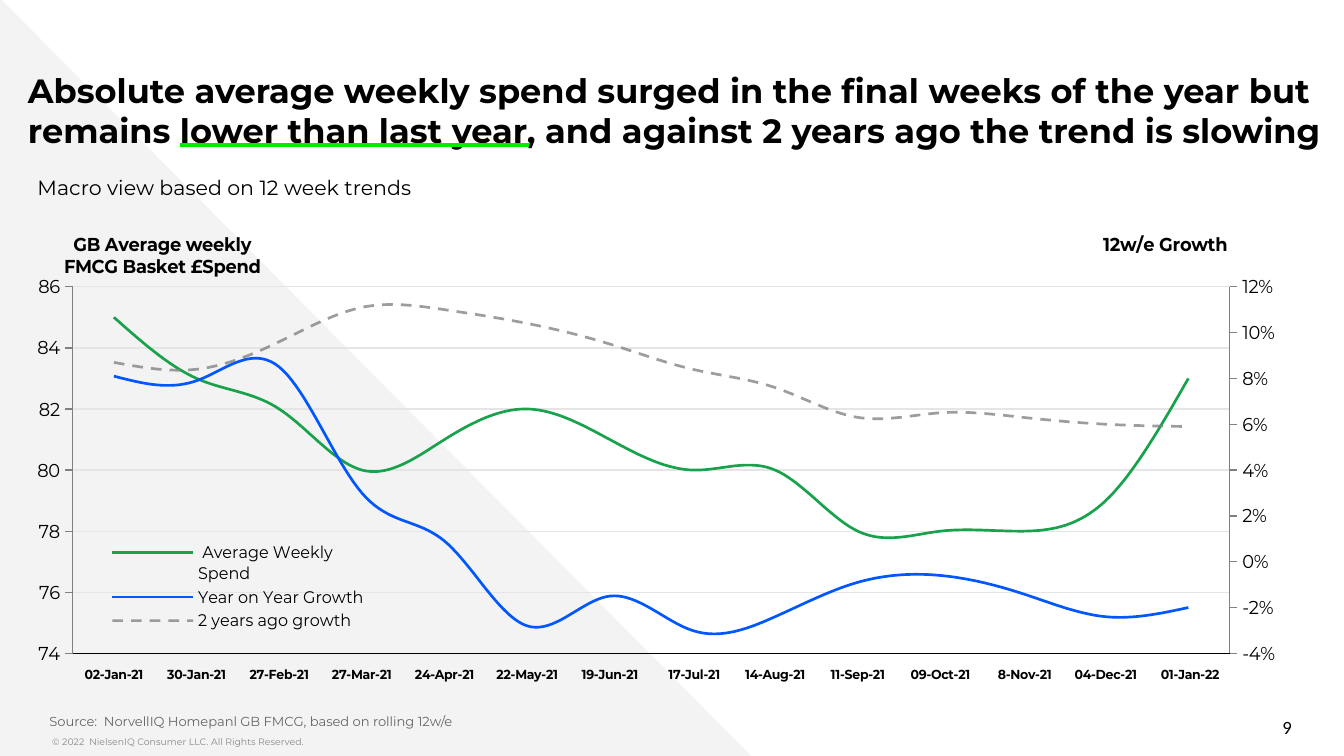
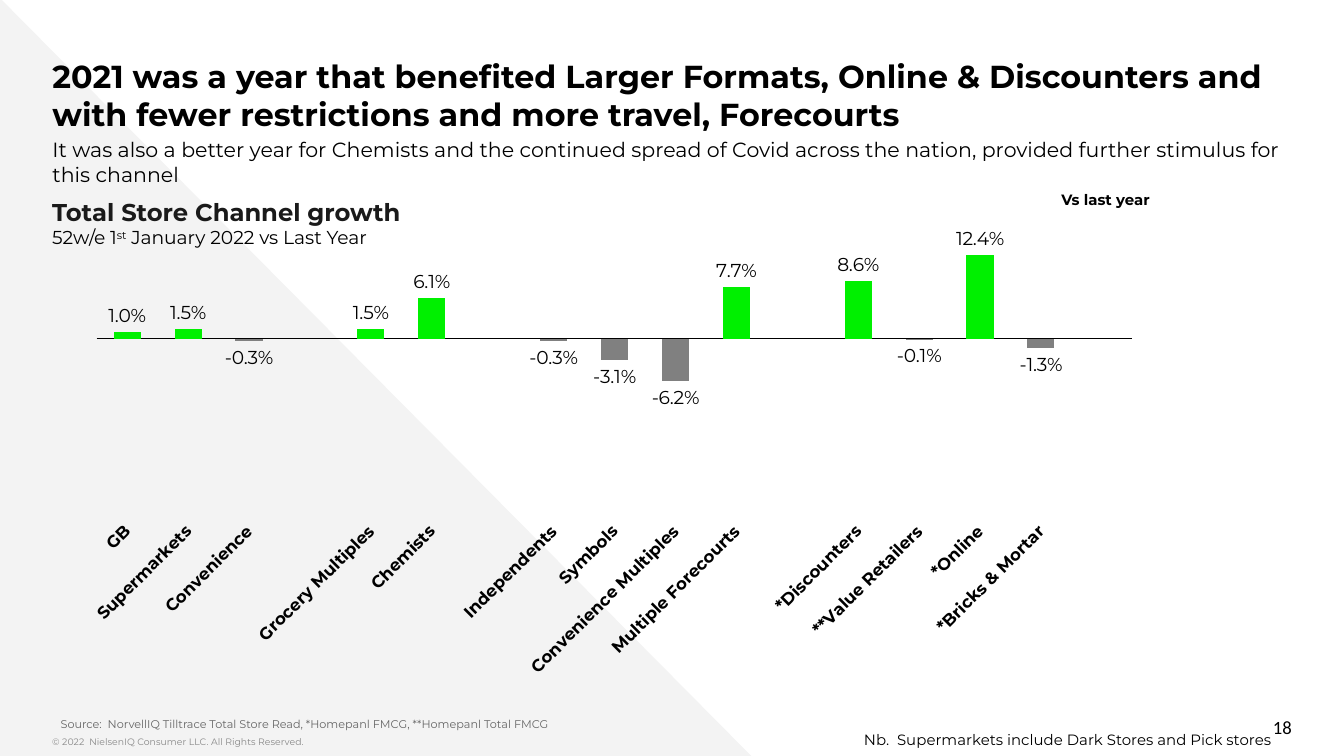
from copy import deepcopy
from typing import NamedTuple

from lxml.etree import SubElement
from pptx import Presentation
from pptx.chart.axis import ValueAxis
from pptx.chart.data import CategoryChartData
from pptx.dml.color import RGBColor
from pptx.enum.chart import (XL_CHART_TYPE, XL_LABEL_POSITION, XL_LEGEND_POSITION,
                             XL_TICK_LABEL_POSITION, XL_TICK_MARK)
from pptx.enum.dml import MSO_LINE
from pptx.enum.shapes import MSO_CONNECTOR, MSO_SHAPE
from pptx.enum.text import MSO_ANCHOR, MSO_AUTO_SIZE, PP_ALIGN
from pptx.oxml import parse_xml
from pptx.oxml.ns import nsdecls, qn
from pptx.util import Pt

FONT = "Montserrat"
BLACK = RGBColor(0x00, 0x00, 0x00)
INK = RGBColor(0x1A, 0x1A, 0x1A)
SOURCE_GREY = RGBColor(0x66, 0x66, 0x66)
GREY = RGBColor(0x80, 0x80, 0x80)
COPYRIGHT_GREY = RGBColor(0x88, 0x88, 0x88)
GRID_GREY = RGBColor(0xE5, 0xE5, 0xE5)
TRIANGLE_GREY = RGBColor(0xF3, 0xF3, 0xF3)
UNDERLINE_GREEN = RGBColor(0x00, 0xEB, 0x00)
BAR_GREEN = RGBColor(0x00, 0xF0, 0x00)
SPEND_GREEN = RGBColor(0x17, 0xA2, 0x4B)
GROWTH_BLUE = RGBColor(0x00, 0x56, 0xFF)


class Box(NamedTuple):
    left: float
    top: float
    width: float
    height: float

    def points(self):
        return [Pt(length) for length in self]


class Page(NamedTuple):
    number: str
    title: str
    title_box: Box
    title_size: float
    source: str
    source_box: Box
    source_size: float


class LineSeries(NamedTuple):
    name: str
    color: RGBColor
    values: list
    number_format: str = "0.0%"
    dashed: bool = False


class Channel(NamedTuple):
    name: str = " "
    growth: float | None = None


TREND_PAGE = Page(
    "9",
    "Absolute average weekly spend surged in the final weeks of the year but remains "
    "lower than last year, and against 2 years ago the trend is slowing",
    Box(15, 30, 705, 52), 18,
    "Source:  NorvellIQ Homepanl GB FMCG, based on rolling 12w/e",
    Box(15, 375, 642, 14.5), 7)
CHANNEL_PAGE = Page(
    "18",
    "2021 was a year that benefited Larger Formats, Online & Discounters and with fewer "
    "restrictions and more travel, Forecourts",
    Box(28, 23, 687, 32), 17,
    "Source:  NorvellIQ Tilltrace Total Store Read, *Homepanl FMCG, **Homepanl Total FMCG",
    Box(21, 377, 642, 14.5), 6)

WEEKS = ["02-Jan-21", "30-Jan-21", "27-Feb-21", "27-Mar-21", "24-Apr-21", "22-May-21",
         "19-Jun-21", " 17-Jul-21", "14-Aug-21", "11-Sep-21", "09-Oct-21", " 8-Nov-21",
         "04-Dec-21", " 01-Jan-22"]
TRENDS = [
    LineSeries(" Average Weekly Spend ", SPEND_GREEN,
               [85, 83, 82, 80, 81, 82, 81, 80, 80, 78, 78, 78, 79, 83], "0"),
    LineSeries("Year on Year Growth", GROWTH_BLUE,
               [0.081, 0.079, 0.085, 0.03, 0.009, -0.028, -0.015, -0.03, -0.024, -0.009,
                -0.006, -0.014, -0.024, -0.02]),
    LineSeries("2 years ago growth", GREY,
               [0.087, 0.084, 0.096, 0.111, 0.11, 0.104, 0.095, 0.084, 0.076, 0.063,
                0.065, 0.063, 0.06, 0.059], dashed=True),
]
CHANNELS = [
    Channel("GB", 0.01), Channel("Supermarkets", 0.015), Channel("Convenience", -0.003),
    Channel(),
    Channel("Grocery Multiples", 0.015), Channel("Chemists", 0.061),
    Channel(),
    Channel("Independents", -0.003), Channel("Symbols", -0.031),
    Channel("Convenience Multiples", -0.062), Channel("Multiple Forecourts", 0.077),
    Channel(),
    Channel("*Discounters", 0.086), Channel("**Value Retailers", -0.001),
    Channel("*Online", 0.124), Channel("*Bricks & Mortar", -0.013),
    Channel(),
]


def set_font(font, size: float, color: RGBColor = BLACK, bold: bool = False,
             name: str = FONT) -> None:
    font.name, font.size, font.bold = name, Pt(size), bold
    font.color.rgb = color


def write(paragraph, text: str, *, size: float, color: RGBColor = BLACK,
          bold: bool = False, name: str = FONT, align=PP_ALIGN.LEFT,
          superscript: bool = False) -> None:
    paragraph.alignment = align
    run = paragraph.add_run()
    run.text = text
    set_font(run.font, size, color, bold, name)
    if superscript:
        run.font._element.set("baseline", "30000")


def set_frame(frame, side: float, edge: float, anchor=MSO_ANCHOR.TOP, wrap: bool = True):
    frame.margin_left = frame.margin_right = Pt(side)
    frame.margin_top = frame.margin_bottom = Pt(edge)
    frame.vertical_anchor = anchor
    frame.auto_size = MSO_AUTO_SIZE.NONE
    frame.word_wrap = wrap
    return frame.paragraphs[0]


def add_text_box(slide, box: Box, side: float = 7.2, anchor=MSO_ANCHOR.TOP,
                 wrap: bool = True):
    shape = slide.shapes.add_textbox(*box.points())
    return set_frame(shape.text_frame, side, 3.6, anchor, wrap)


def place_placeholder(shape, box: Box):
    shape.left, shape.top, shape.width, shape.height = box.points()
    paragraph = set_frame(shape.text_frame, 0, 7.2)
    paragraph.line_spacing = 1.0
    paragraph.space_before = Pt(0)
    return paragraph


def add_page(presentation, page: Page):
    slide = presentation.slides.add_slide(presentation.slide_layouts[0])
    triangle = slide.shapes.add_shape(MSO_SHAPE.RIGHT_TRIANGLE,
                                      *Box(0, -1, 402.5, 406).points())
    triangle.shadow.inherit = False
    triangle.fill.solid()
    triangle.fill.fore_color.rgb = TRIANGLE_GREY
    triangle.line.fill.background()
    slide.shapes._spTree.insert(2, triangle._element)

    write(add_text_box(slide, Box(28, 391, 399, 14), side=0),
          "© 2022  NielsenIQ Consumer LLC. All Rights Reserved.",
          size=5, color=COPYRIGHT_GREY)
    write(add_text_box(slide, Box(530, 379, 162, 21.5), side=0, anchor=MSO_ANCHOR.MIDDLE),
          page.number, size=10, name="Calibri", align=PP_ALIGN.RIGHT)

    title, source = slide.placeholders
    write(place_placeholder(title, page.title_box), page.title,
          size=page.title_size, bold=True)
    paragraph = place_placeholder(source, page.source_box)
    properties = paragraph._p.get_or_add_pPr()
    properties.set("marL", str(Pt(11.5)))
    properties.set("indent", "0")
    write(paragraph, page.source, size=page.source_size, color=SOURCE_GREY)
    return slide


def set_layout(element, left: float, top: float, width: float | None = None,
               height: float | None = None, inner: bool = False) -> None:
    for previous in element.findall(qn("c:layout")):
        element.remove(previous)
    layout = parse_xml(f"<c:layout {nsdecls('c')}><c:manualLayout/></c:layout>")
    settings = [("layoutTarget", "inner" if inner else None), ("xMode", "edge"),
                ("yMode", "edge"), ("x", left), ("y", top), ("w", width), ("h", height)]
    for tag, value in settings:
        if value is not None:
            SubElement(layout[0], qn(f"c:{tag}")).set("val", str(value))
    leaders = (qn("c:tx"), qn("c:legendPos"))
    element.insert(sum(child.tag in leaders for child in element), layout)


def format_category_axis(axis, size: float) -> None:
    axis.tick_label_position = XL_TICK_LABEL_POSITION.LOW
    axis.major_tick_mark = axis.minor_tick_mark = XL_TICK_MARK.NONE
    axis.has_major_gridlines = False
    axis.format.line.color.rgb = BLACK
    axis.format.line.width = Pt(0.75)
    set_font(axis.tick_labels.font, size, bold=True)


def format_value_axis(axis, title: str, title_left: float, low: float, high: float,
                      step: float, number_format: str) -> None:
    axis.minimum_scale, axis.maximum_scale, axis.major_unit = low, high, step
    axis.major_tick_mark = XL_TICK_MARK.OUTSIDE
    axis.minor_tick_mark = XL_TICK_MARK.NONE
    axis.format.line.color.rgb = GREY
    axis.format.line.width = Pt(0.75)
    axis.tick_labels.number_format = number_format
    axis.tick_labels.number_format_is_linked = False
    set_font(axis.tick_labels.font, 10)
    frame = axis.axis_title.text_frame
    write(frame.paragraphs[0], title, size=10, bold=True, align=PP_ALIGN.CENTER)
    frame._txBody.bodyPr.set("rot", "0")
    frame._txBody.bodyPr.set("vert", "horz")
    set_layout(axis.axis_title._element, title_left, 0.02)


def add_right_axis(chart, left_axis) -> ValueAxis:
    plot_area = chart._chartSpace.chart.plotArea
    left_lines = plot_area.find(qn("c:lineChart"))
    right_lines = deepcopy(left_lines)
    left_lines.addnext(right_lines)
    for series in left_lines.findall(qn("c:ser"))[1:]:
        left_lines.remove(series)
    right_lines.remove(right_lines.find(qn("c:ser")))

    category_axis = deepcopy(chart.category_axis._element)
    value_axis = deepcopy(left_axis._element)
    left_axis._element.addnext(value_axis)
    value_axis.addnext(category_axis)
    identifiers = ("50010", "50020")
    for reference, identifier in zip(right_lines.findall(qn("c:axId")), identifiers):
        reference.set("val", identifier)
    for axis, own, other in ((category_axis, *identifiers),
                             (value_axis, *reversed(identifiers))):
        axis.find(qn("c:axId")).set("val", own)
        axis.find(qn("c:crossAx")).set("val", other)
    category_axis.find(qn("c:delete")).set("val", "1")
    value_axis.find(qn("c:axPos")).set("val", "r")
    value_axis.find(qn("c:crosses")).set("val", "max")
    right_axis = ValueAxis(value_axis)
    right_axis.has_major_gridlines = False
    return right_axis


def add_chart(slide, kind, box: Box, data: CategoryChartData):
    chart = slide.shapes.add_chart(kind, *box.points(), data).chart
    chart.has_title = False
    chart.has_legend = False
    set_font(chart.font, 10)
    return chart


def add_trend_chart(slide) -> None:
    data = CategoryChartData()
    data.categories = WEEKS
    for trend in TRENDS:
        data.add_series(trend.name, trend.values, trend.number_format)
    chart = add_chart(slide, XL_CHART_TYPE.LINE, Box(20, 116.5, 663, 265.5), data)
    for series, trend in zip(chart.plots[0].series, TRENDS):
        series.smooth = True
        line = series.format.line
        line.color.rgb = trend.color
        line.width = Pt(1.5)
        if trend.dashed:
            line.dash_style = MSO_LINE.DASH
            color = series._element.find(".//" + qn("a:srgbClr"))
            SubElement(color, qn("a:alpha")).set("val", "76000")

    format_category_axis(chart.category_axis, 7)
    left_axis = chart.value_axis
    right_axis = add_right_axis(chart, left_axis)
    left_axis.has_major_gridlines = True
    left_axis.major_gridlines.format.line.color.rgb = GRID_GREY
    left_axis.major_gridlines.format.line.width = Pt(0.75)
    format_value_axis(left_axis, "GB Average weekly FMCG Basket £Spend", 0.01,
                      74, 86, 2, "0")
    format_value_axis(right_axis, "12w/e Growth", 0.89, -0.04, 0.12, 0.02, "0%")

    chart.has_legend = True
    chart.legend.position = XL_LEGEND_POSITION.LEFT
    chart.legend.include_in_layout = False
    set_font(chart.legend.font, 9)
    set_layout(chart.legend._element, 0.05, 0.65, 0.22, 0.19)
    set_layout(chart._chartSpace.chart.plotArea, 0.03, 0.14, 0.98, 0.74, inner=True)


def add_channel_chart(slide) -> None:
    data = CategoryChartData()
    data.categories = [channel.name for channel in CHANNELS]
    data.add_series("Series 1", [channel.growth for channel in CHANNELS], "0.0%")
    chart = add_chart(slide, XL_CHART_TYPE.COLUMN_CLUSTERED, Box(46, 120, 578, 245), data)
    plot = chart.plots[0]
    plot.gap_width = 125
    plot.vary_by_categories = False
    series = plot.series[0]
    series.invert_if_negative = False
    series.format.fill.solid()
    series.format.fill.fore_color.rgb = BAR_GREEN
    for index, channel in enumerate(CHANNELS):
        if channel.growth is not None and channel.growth < 0:
            fill = series.points[index].format.fill
            fill.solid()
            fill.fore_color.rgb = GREY

    labels = series.data_labels
    labels.show_value = True
    labels.position = XL_LABEL_POSITION.OUTSIDE_END
    labels.number_format = "0.0%"
    labels.number_format_is_linked = False
    set_font(labels.font, 10)

    format_category_axis(chart.category_axis, 9)
    chart.category_axis._element.txPr.bodyPr.set("rot", "-2700000")
    axis = chart.value_axis
    axis.minimum_scale, axis.maximum_scale = -0.25, 0.15
    axis.has_major_gridlines = False
    axis.visible = False
    set_layout(chart._chartSpace.chart.plotArea, 0.01, 0.03, 0.96, 0.59, inner=True)


def add_trend_slide(presentation) -> None:
    slide = add_page(presentation, TREND_PAGE)
    underline = slide.shapes.add_connector(MSO_CONNECTOR.STRAIGHT, Pt(96.5), Pt(77.75),
                                           Pt(283.5), Pt(77.75))
    underline.line.color.rgb = UNDERLINE_GREEN
    underline.line.width = Pt(2.25)
    SubElement(underline._element.spPr, qn("a:effectLst"))
    add_trend_chart(slide)
    write(add_text_box(slide, Box(13, 90, 360, 21)),
          "Macro view based on 12 week trends", size=11)


def add_channel_slide(presentation) -> None:
    slide = add_page(presentation, CHANNEL_PAGE)
    add_channel_chart(slide)
    write(add_text_box(slide, Box(453, 388, 235.5, 17), wrap=False),
          "Nb.  Supermarkets include Dark Stores and Pick stores",
          size=8, align=PP_ALIGN.RIGHT)
    write(add_text_box(slide, Box(561.5, 98.5, 62.5, 17), wrap=False),
          "Vs last year", size=8, bold=True)
    heading = add_text_box(slide, Box(28, 102, 299.5, 35), side=0)
    heading.space_after = Pt(12)
    write(heading, "Total Store Channel growth", size=13, color=INK, bold=True)
    heading.add_line_break()
    write(heading, "52w/e 1", size=10)
    write(heading, "st", size=10, superscript=True)
    write(heading, " January 2022 vs Last Year", size=10)
    write(add_text_box(slide, Box(21, 70, 686, 34)),
          "It was also a better year for Chemists and the continued spread of Covid across "
          "the nation, provided further stimulus for this channel", size=11)


def main() -> None:
    presentation = Presentation()
    presentation.slide_width, presentation.slide_height = Pt(720), Pt(405)
    add_trend_slide(presentation)
    add_channel_slide(presentation)
    presentation.save("out.pptx")


if __name__ == "__main__":
    main()
